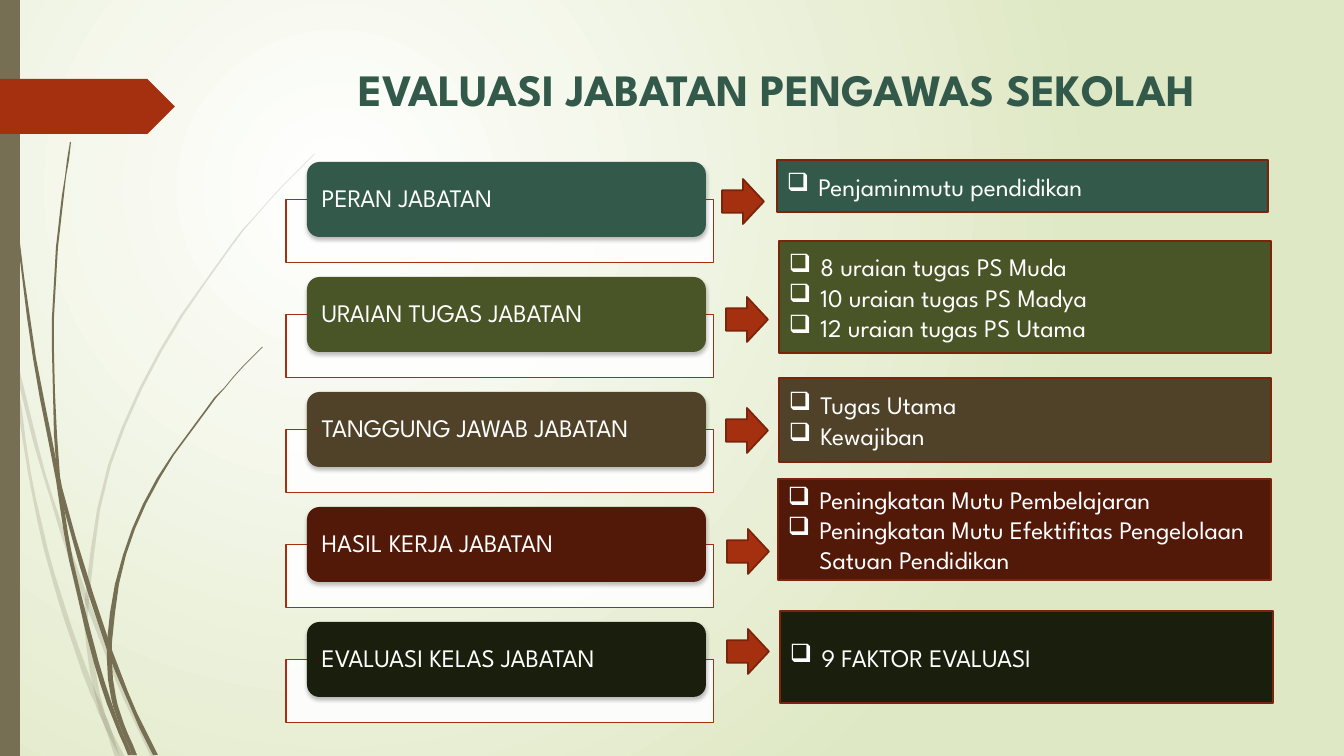
from lxml import etree
from pptx import Presentation, util as u
from pptx.dml.color import RGBColor
from pptx.enum import shapes, text
from pptx.oxml.ns import qn

TITLE = "EVALUASI JABATAN PENGAWAS SEKOLAH"
FONT = "League Spartan"
HEX = {
    "white": "FFFFFF", "black": "000000", "glow": "DFE8C4", "grass": "766F54",
    "red": "A53010", "edge": "7A240C", "teal": "325949", "olive": "495526",
    "brown": "504228", "wine": "521808", "dark": "1A1F0D",
}
# heading, colour, detail box (left, top, width, height), arrow (left, top), points
ROWS = [
    ("PERAN JABATAN", "teal", (777, 160, 491, 52), (722, 179),
     ["Penjaminmutu pendidikan"]),
    ("URAIAN TUGAS JABATAN", "olive", (779, 241, 492, 112), (726, 297),
     ["8 uraian tugas PS Muda", "10 uraian tugas PS Madya",
      "12 uraian tugas PS Utama"]),
    ("TANGGUNG JAWAB JABATAN", "brown", (779, 378, 492, 84), (726, 408),
     ["Tugas Utama", "Kewajiban"]),
    ("HASIL KERJA JABATAN", "wine", (778, 479, 493, 101), (727, 529),
     ["Peningkatan Mutu Pembelajaran",
      "Peningkatan Mutu Efektifitas Pengelolaan Satuan Pendidikan"]),
    ("EVALUASI KELAS JABATAN", "dark", (780, 611, 493, 92), (727, 629),
     ["9 FAKTOR EVALUASI"]),
]
# each blade of grass: opacity in percent, rows where it is cut, (y, left x, right x)
BLADES = [
    (20, (3, 6),
     [(284, 0, 0), (301, 0, 4), (325, 5, 9), (348, 10, 14), (445, 34, 38),
      (525, 58, 62), (600, 84, 89), (700, 124, 129), (757, 151, 156)]),
    (20, (6,),
     [(353, 11, 11), (379, 14, 17), (473, 28, 31), (550, 44, 48),
      (625, 66, 71), (695, 91, 97), (720, 102, 108), (757, 115, 120)]),
    (20, (5, 7),
     [(154, 314, 315), (199, 270, 271), (246, 230, 232), (351, 159, 162),
      (465, 108, 111), (600, 85, 89), (651, 87, 92), (717, 101, 106),
      (757, 120, 125)]),
    (100, (4, 7),
     [(0, 3, 4), (110, 7, 8), (235, 17, 19), (358, 33, 36), (480, 56, 60),
      (560, 69, 73), (663, 94, 99), (724, 115, 119), (755, 128, 132)]),
    (100, (4, 7),
     [(142, 70, 71), (195, 62, 64), (247, 56, 58), (352, 52, 54),
      (476, 57, 60), (509, 64, 68), (596, 89, 94), (650, 107, 112),
      (713, 133, 137), (755, 153, 158)]),
    (100, (5, 7),
     [(347, 262, 263), (377, 233, 234), (409, 206, 208), (478, 157, 160),
      (555, 123, 126), (642, 107, 112), (697, 111, 116), (724, 119, 124),
      (755, 132, 137)]),
]
PX = 914400 / 100.8
KIND = shapes.MSO_SHAPE
STEPS = 3
CARD_TOP, FRAME_TOP, PITCH = 162, 200, 115


def emu(*px):
    return [round(n * PX) for n in px]


def rgb(name):
    return RGBColor.from_string(HEX[name])


def sub(parent, tag, **attrs):
    node = etree.SubElement(parent, qn(tag))
    for key, val in attrs.items():
        node.set(key, str(val))
    return node


def paint(shape, fill, line=None, width=1.25, alpha=100):
    shape.shadow.inherit = False
    shape.fill.solid()
    shape.fill.fore_color.rgb = rgb(fill)
    if alpha < 100:
        color = shape.element.spPr.find(qn("a:solidFill"))[0]
        sub(color, "a:alpha", val=alpha * 1000)
    if line:
        shape.line.color.rgb = rgb(line)
        shape.line.width = u.Pt(width)
    else:
        shape.line.fill.background()


def add(kind, box, fill, **style):
    shape = slide.shapes.add_shape(kind, *emu(*box))
    paint(shape, fill, **style)
    return shape


def write(shape, lines, color="white", size=18, align=text.PP_ALIGN.LEFT, bold=False):
    frame = shape.text_frame
    frame.word_wrap = True
    frame.vertical_anchor = text.MSO_ANCHOR.MIDDLE
    frame.text = "\n".join(lines)
    for para in frame.paragraphs:
        para.alignment = align
        para.font.name, para.font.size = FONT, u.Pt(size)
        para.font.bold = bold
        para.font.color.rgb = rgb(color)
    return frame


def smooth(pts):
    """Points along a Hermite curve of x over y."""
    ends = [pts[0], *pts, pts[-1]]
    slopes = [(c[0] - a[0]) / (c[1] - a[1]) for a, c in zip(ends, ends[2:])]
    out = []
    for (x, y), (x2, y2), m, m2 in zip(pts, pts[1:], slopes, slopes[1:]):
        high = y2 - y
        for i in range(STEPS):
            t = i / STEPS
            bend = t * (1 - t) * high * ((1 - t) * m - t * m2)
            ease = t * t * (3 - 2 * t)
            out.append((x + ease * (x2 - x) + bend, y + t * high))
    return out + [pts[-1]]


def backdrop():
    fill = slide.background.fill
    fill.gradient()
    for stop, name in zip(fill.gradient_stops, ("white", "glow")):
        stop.color.rgb = rgb(name)
    grad = slide.element.find(".//" + qn("a:gradFill"))
    grad.remove(grad.find(qn("a:lin")))
    ring = sub(grad, "a:path", path="circle")
    sub(ring, "a:fillToRect", l=50000, t=50000, r=100000, b=100000)


def grass(alpha, cuts, rows):
    left = smooth([(x, y) for y, x, _ in rows])
    right = smooth([(x, y) for y, _, x in rows])
    marks = [0, *cuts, len(rows) - 1]
    for top, end in zip(marks, marks[1:]):
        part = slice(top * STEPS, end * STEPS + 1)
        outline = left[part] + right[part][::-1]
        pen = slide.shapes.build_freeform(*outline[0], scale=PX)
        pen.add_line_segments(outline[1:], close=True)
        paint(pen.convert_to_shape(), "grass", alpha=alpha)


def card(row, name, color):
    drop = row * PITCH
    add(KIND.RECTANGLE, (286, FRAME_TOP + drop, 428, 63), "white",
        line="red", width=0.75, alpha=90)
    shape = add(KIND.ROUNDED_RECTANGLE, (307, CARD_TOP + drop, 399, 75), color)
    effects = shape.element.spPr.find(qn("a:effectLst"))
    shade = sub(effects, "a:outerShdw", blurRad=u.Pt(3), dist=u.Pt(2),
                dir=5400000, rotWithShape=0)
    sub(sub(shade, "a:srgbClr", val=HEX["black"]), "a:alpha", val=25000)
    frame = write(shape, [name])
    frame.margin_left = emu(11)[0]
    frame.paragraphs[0].line_spacing = 0.9


def detail(box, color, points):
    frame = write(add(KIND.RECTANGLE, box, color, line="edge"), points)
    indent = u.Pt(22.5)
    for para in frame.paragraphs:
        props = para._p.get_or_add_pPr()
        props.set("marL", str(indent))
        props.set("indent", str(-indent))
        last = props.find(qn("a:defRPr"))
        last.addprevious(etree.Element(qn("a:buFont"), typeface="Wingdings", charset="2"))
        last.addprevious(etree.Element(qn("a:buChar"), char="q"))


deck = Presentation()
deck.slide_width, deck.slide_height = emu(1344, 756)
slide = deck.slides.add_slide(deck.slide_layouts[6])

backdrop()
for blade in BLADES:
    grass(*blade)
add(KIND.RECTANGLE, (0, 0, 20, 756), "grass")
add(KIND.PENTAGON, (0, 79, 175, 55), "red")
title = write(slide.shapes.add_textbox(*emu(286, 56, 983, 79)), [TITLE], "teal", 32,
              text.PP_ALIGN.CENTER, True)
title.margin_bottom = emu(19)[0]

for row, (name, color, box, _, points) in enumerate(ROWS):
    card(row, name, color)
    detail(box, color, points)
for *_, tip, points in ROWS:
    add(KIND.RIGHT_ARROW, (*tip, 42, 45), "red", line="edge")

deck.save("out.pptx")
